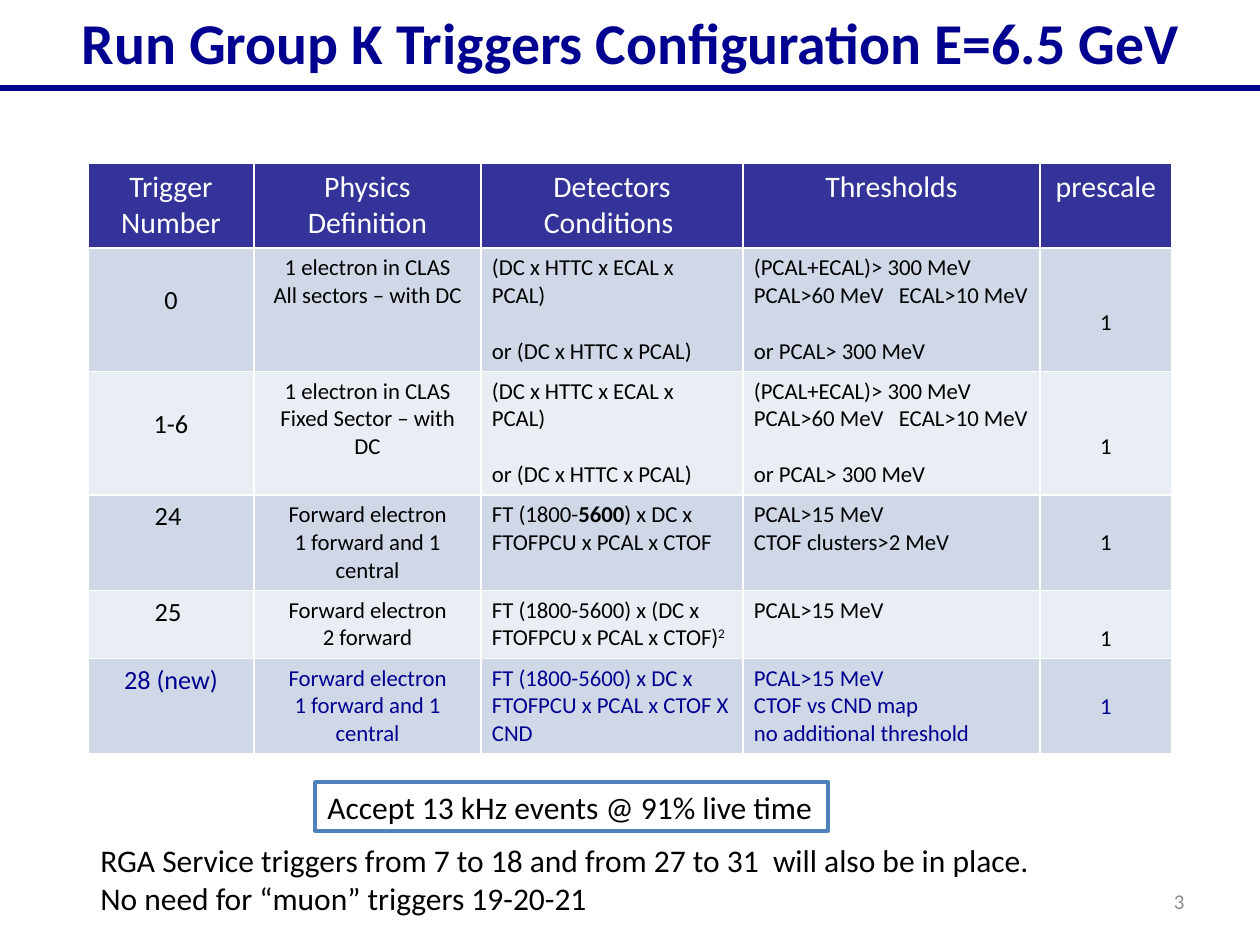
from dataclasses import dataclass

from lxml.etree import SubElement
from pptx import Presentation
from pptx.dml.color import RGBColor
from pptx.enum.shapes import MSO_CONNECTOR, MSO_SHAPE
from pptx.enum.text import MSO_ANCHOR, MSO_AUTO_SIZE, PP_ALIGN
from pptx.oxml import parse_xml
from pptx.oxml.ns import nsdecls, qn
from pptx.util import Emu, Pt


@dataclass(frozen=True)
class Theme:
    font: str = "Calibri"
    navy: str = "000090"
    header: str = "333399"
    bands: tuple = ("D0D8E8", "E9EDF4")
    white: str = "FFFFFF"
    black: str = "000000"
    frame: str = "4F81BD"
    gray: str = "8C8C8C"
    title: int = 33
    note: int = 18
    heading: int = 17
    number: int = 15
    body: int = 13
    page: int = 12


T = Theme()
LINE_GAP = 16  # points, one line of body text
COLS = [166, 227, 262, 297, 132]
ROWS = [84, 123, 123, 68, 68, 95]
HEADERS = ["Trigger Number", "Physics\nDefinition", "Detectors\nConditions ",
           "Thresholds", "prescale"]
DC_CONDITIONS = "(DC x HTTC x ECAL x PCAL)\nor (DC x HTTC x PCAL)"
DC_THRESHOLDS = ("(PCAL+ECAL)> 300 MeV\nPCAL>60 MeV\tECAL>10 MeV\n"
                 "or PCAL> 300 MeV")
TRIGGERS = [
    ["0", "1 electron in CLAS\nAll sectors – with DC",
     DC_CONDITIONS, DC_THRESHOLDS, "1"],
    ["1-6", "1 electron in CLAS\nFixed Sector – with DC",
     DC_CONDITIONS, DC_THRESHOLDS, "1"],
    ["24 ", "Forward electron\n1 forward and 1 central",
     "FT (1800-5600) x DC x FTOFPCU x PCAL x CTOF",
     "PCAL>15 MeV\nCTOF clusters>2 MeV", "1"],
    ["25 ", "Forward electron\n2 forward",
     "FT (1800-5600) x (DC x FTOFPCU x PCAL x CTOF)2", "PCAL>15 MeV", "1"],
    ["28 (new)", "Forward electron\n1 forward and 1 central",
     "FT (1800-5600) x DC x FTOFPCU x PCAL x CTOF X CND",
     "PCAL>15 MeV\nCTOF vs CND map\nno additional threshold", "1"],
]
# Top margins that lower the trigger number and the prescale, per row
NUMBER_TOPS = [37, 37, 6, 6, 6]
PRESCALE_TOPS = [61, 61, 34, 34, 34]


def px(n):
    return Emu(round(n * 914400 / 126))


def rgb(color):
    return RGBColor.from_string(color)


def style_text(tf, size, color, align=PP_ALIGN.LEFT, bold=False):
    for p in tf.paragraphs:
        p.alignment = align
        for r in p.runs:
            r.font.name = T.font
            r.font.size = Pt(size)
            r.font.bold = bold
            r.font.color.rgb = rgb(color)


def add_title(s, text):
    title = s.shapes.title
    title.left, title.top, title.width, title.height = map(px, (19, 0, 1223, 100))
    tf = title.text_frame
    tf.text = text
    tf.auto_size = MSO_AUTO_SIZE.NONE
    tf.vertical_anchor = MSO_ANCHOR.TOP
    style_text(tf, T.title, T.navy, PP_ALIGN.CENTER, True)


def add_rule(s, y):
    line = s.shapes.add_connector(MSO_CONNECTOR.STRAIGHT, 0, px(y), px(1260), px(y))
    line.line.color.rgb = rgb(T.navy)
    line.line.width = Pt(3)
    SubElement(line._element.spPr, qn("a:effectLst"))


def add_text(s, box, text, size, color, align=PP_ALIGN.LEFT,
             anchor=MSO_ANCHOR.TOP, wrap=False):
    tf = s.shapes.add_textbox(*map(px, box)).text_frame
    tf.text = text
    tf.word_wrap = wrap
    tf.vertical_anchor = anchor
    style_text(tf, size, color, align)


def add_framed_text(s, box, text):
    sp = s.shapes.add_shape(MSO_SHAPE.RECTANGLE, *map(px, box))
    sp.shadow.inherit = False
    sp.fill.solid()
    sp.fill.fore_color.rgb = rgb(T.white)
    sp.line.color.rgb = rgb(T.frame)
    sp.line.width = Pt(2)
    tf = sp.text_frame
    tf.text = text
    tf.word_wrap = False
    tf.vertical_anchor = MSO_ANCHOR.TOP
    style_text(tf, T.note, T.black)


def set_borders(cell):
    tc_pr = cell._tc.get_or_add_tcPr()
    for i, tag in enumerate(("lnL", "lnR", "lnT", "lnB")):
        tc_pr.insert(i, parse_xml(
            f'<a:{tag} {nsdecls("a")} w="{Pt(1)}"><a:solidFill>'
            f'<a:srgbClr val="{T.white}"/></a:solidFill></a:{tag}>'))


def set_tab(p, x):
    tabs = SubElement(p._p.get_or_add_pPr(), qn("a:tabLst"))
    SubElement(tabs, qn("a:tab"), pos=str(px(x)), algn="l")


def fill_cell(cell, text, fill, size, color, align=PP_ALIGN.CENTER, top=6):
    cell.fill.solid()
    cell.fill.fore_color.rgb = rgb(fill)
    cell.margin_top = px(top)
    cell.margin_left = cell.margin_right = px(11)
    set_borders(cell)
    tf = cell.text_frame
    tf.text = text
    style_text(tf, size, color, align)
    for p in tf.paragraphs:
        if p.text.startswith("or "):  # alternatives stand one line apart
            p.space_before = Pt(LINE_GAP)
        if "\t" in p.text:
            set_tab(p, 145)
            cell.margin_right = px(6)  # room for both thresholds on one line


def split_run(p, part):
    """Give the last occurrence of part a run of its own and return it."""
    first = p.runs[0]
    size, color = first.font.size, first.font.color.rgb
    before, _, after = p.text.rpartition(part)
    first.text = before
    for text in filter(None, (part, after)):
        r = p.add_run()
        r.text = text
        r.font.name, r.font.size = T.font, size
        r.font.color.rgb = color
    return p.runs[1]


def add_trigger_table(s):
    table = s.shapes.add_table(len(ROWS), len(COLS), px(88), px(163),
                               px(sum(COLS)), px(sum(ROWS))).table
    for col, width in zip(table.columns, COLS):
        col.width = px(width)
    for row, height in zip(table.rows, ROWS):
        row.height = px(height)

    # Header row
    for c, text in enumerate(HEADERS):
        fill_cell(table.cell(0, c), text, T.header, T.heading, T.white)

    # Trigger rows, the new trigger in navy
    for i, trigger in enumerate(TRIGGERS):
        color = T.navy if "new" in trigger[0] else T.black
        tops = [NUMBER_TOPS[i], 6, 6, 6, PRESCALE_TOPS[i]]
        for c, text in enumerate(trigger):
            fill_cell(table.cell(i + 1, c), text, T.bands[i % 2],
                      T.body if c else T.number, color,
                      PP_ALIGN.LEFT if c in (2, 3) else PP_ALIGN.CENTER, tops[c])

    # Emphasis and exponent in the detector conditions
    split_run(table.cell(3, 2).text_frame.paragraphs[0], "5600").font.bold = True
    exponent = split_run(table.cell(4, 2).text_frame.paragraphs[0], "2")
    exponent._r.get_or_add_rPr().set("baseline", "30000")


def main():
    prs = Presentation()
    prs.slide_width, prs.slide_height = px(1260), px(945)
    s = prs.slides.add_slide(prs.slide_layouts[5])

    # Heading
    add_rule(s, 88)
    add_title(s, "Run Group K Triggers Configuration E=6.5 GeV")

    # Triggers
    add_trigger_table(s)

    # Page number and notes
    add_text(s, (903, 876, 294, 50), "3", T.page, T.gray, PP_ALIGN.RIGHT,
             MSO_ANCHOR.MIDDLE, True)
    add_framed_text(s, (315, 782, 513, 49), "Accept 13 kHz events @ 91% live time")
    add_text(s, (88, 835, 971, 89),
             "RGA Service triggers from 7 to 18 and from 27 to 31  will also be in place.\n"
             "No need for “muon” triggers 19-20-21", T.note, T.black)
    prs.save("out.pptx")


if __name__ == "__main__":
    main()
